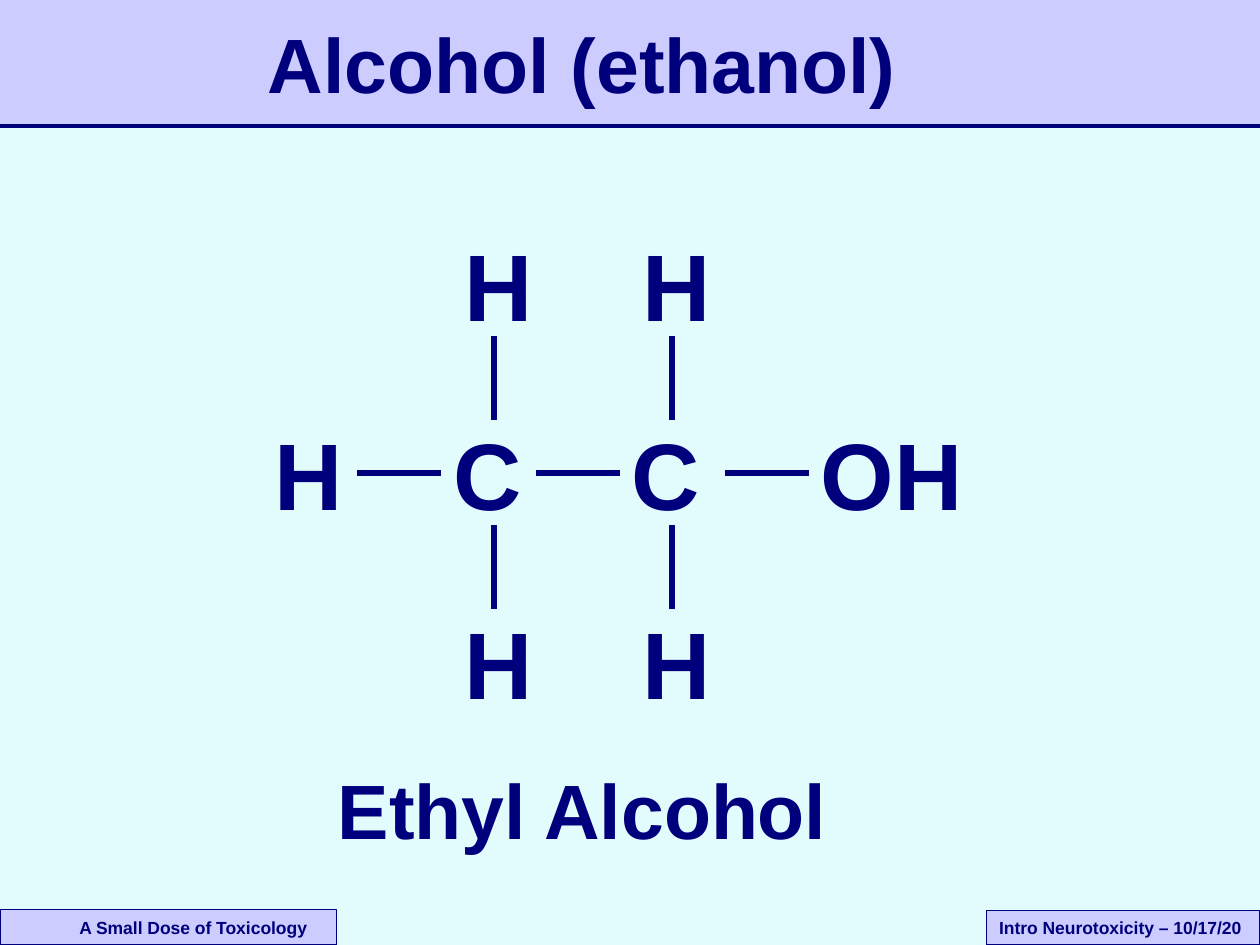
from lxml import etree
from pptx import Presentation
from pptx.dml.color import RGBColor
from pptx.enum.shapes import MSO_CONNECTOR, MSO_SHAPE
from pptx.enum.text import MSO_ANCHOR, PP_ALIGN
from pptx.oxml.ns import qn
from pptx.util import Cm, Pt

STRAIGHT = MSO_CONNECTOR.STRAIGHT
RECTANGLE = MSO_SHAPE.RECTANGLE
LEFT, CENTER = PP_ALIGN.LEFT, PP_ALIGN.CENTER
TOP, MIDDLE = MSO_ANCHOR.TOP, MSO_ANCHOR.MIDDLE
LEFT_SIDE, RIGHT_SIDE = 1, 3

NAVY = RGBColor(0x00, 0x00, 0x7D)
LAVENDER = RGBColor(0xCC, 0xCC, 0xFF)
PALE_CYAN = RGBColor(0xE2, 0xFC, 0xFE)

SLIDE_WIDTH, SLIDE_HEIGHT = 25.4, 19.05
HEADER_HEIGHT = 2.54
CARBON_LEFTS = (8.89, 12.49)
CHAIN_TOP = 8.26
ROW_PITCH = 3.81
ATOM_HEIGHT = 2.54
CARBON_WIDTH, HYDROGEN_WIDTH = 2.03, 1.9
BOND_LENGTH = 1.69
BOND_Y = CHAIN_TOP + ATOM_HEIGHT / 2


def write_text(shape, text, size, align=LEFT, anchor=TOP, left_inset=0.25):
    frame = shape.text_frame
    frame.word_wrap = True
    frame.vertical_anchor = anchor
    frame.margin_left = Cm(left_inset)
    frame.margin_right = Cm(0.25)
    frame.margin_top = frame.margin_bottom = Cm(0.13)
    paragraph = frame.paragraphs[0]
    paragraph.alignment = align
    run = paragraph.add_run()
    run.text = text
    run.font.name = "Arial"
    run.font.size = Pt(size)
    run.font.bold = True
    run.font.color.rgb = NAVY


def add_label(slide, text, left, top, width, height, size, **text_format):
    label = slide.shapes.add_textbox(Cm(left), Cm(top), Cm(width), Cm(height))
    write_text(label, text, size, **text_format)
    return label


def add_panel(slide, left, top, width, height, outlined=True):
    panel = slide.shapes.add_shape(RECTANGLE, Cm(left), Cm(top), Cm(width), Cm(height))
    panel.shadow.inherit = False
    panel.fill.solid()
    panel.fill.fore_color.rgb = LAVENDER
    if outlined:
        panel.line.color.rgb = NAVY
        panel.line.width = Pt(0.75)
    else:
        panel.line.fill.background()
    return panel


def add_line(slide, x1, y1, x2, y2, weight=3.5):
    line = slide.shapes.add_connector(STRAIGHT, Cm(x1), Cm(y1), Cm(x2), Cm(y2))
    line.line.color.rgb = NAVY
    line.line.width = Pt(weight)
    etree.SubElement(line._element.spPr, qn("a:effectLst"))
    return line


def add_atom(slide, symbol, left, width, row=0):
    """Place an atom in a row counted from the carbon chain, downwards positive."""
    top = CHAIN_TOP + row * ROW_PITCH
    return add_label(slide, symbol, left, top, width, ATOM_HEIGHT, 54)


def add_chain_bond(slide, right_atom, left, left_atom=None):
    bond = add_line(slide, left, BOND_Y, left + BOND_LENGTH, BOND_Y)
    if left_atom is not None:
        bond.begin_connect(left_atom, RIGHT_SIDE)
    bond.end_connect(right_atom, LEFT_SIDE)


def add_carbon_group(slide, left):
    """Add a carbon with a hydrogen above and one below."""
    carbon = add_atom(slide, "C", left, CARBON_WIDTH)
    bond_x = left + 1.06
    for row, bond_top in ((-1, 6.77), (1, 6.77 + ROW_PITCH)):
        add_atom(slide, "H", left + 0.22, HYDROGEN_WIDTH, row)
        add_line(slide, bond_x, bond_top + BOND_LENGTH, bond_x, bond_top)
    return carbon


def add_molecule(slide):
    first_carbon, second_carbon = [add_carbon_group(slide, x) for x in CARBON_LEFTS]
    hydrogen = add_atom(slide, "H", 5.29, HYDROGEN_WIDTH)
    hydroxyl = add_atom(slide, "OH", 16.3, 3.38)
    add_chain_bond(slide, first_carbon, 7.19, left_atom=hydrogen)
    add_chain_bond(slide, second_carbon, 10.8)
    add_chain_bond(slide, hydroxyl, 14.61)


def add_header(slide):
    add_panel(slide, 0, 0, SLIDE_WIDTH, HEADER_HEIGHT, outlined=False)
    add_line(slide, 0, HEADER_HEIGHT, SLIDE_WIDTH, HEADER_HEIGHT, weight=2)
    add_label(slide, "Alcohol (ethanol)", 2.74, 0.21, 17.99, 2.12, 44,
              align=CENTER, anchor=MIDDLE)


def add_footer(slide):
    course = add_panel(slide, 0, 18.34, 6.78, 0.71)
    write_text(course, "A Small Dose of Toxicology", 10, anchor=MIDDLE, left_inset=1.6)
    lecture = add_panel(slide, 19.89, 18.36, 5.51, 0.69)
    write_text(lecture, "Intro Neurotoxicity – 10/17/20", 10, anchor=MIDDLE)


def main():
    presentation = Presentation()
    presentation.slide_width = Cm(SLIDE_WIDTH)
    presentation.slide_height = Cm(SLIDE_HEIGHT)
    slide = presentation.slides.add_slide(presentation.slide_layouts[6])
    slide.background.fill.solid()
    slide.background.fill.fore_color.rgb = PALE_CYAN
    add_header(slide)
    add_footer(slide)
    add_molecule(slide)
    add_label(slide, "Ethyl Alcohol", 6.56, 15.24, 10.6, 2.12, 44)
    presentation.save("out.pptx")


if __name__ == "__main__":
    main()
